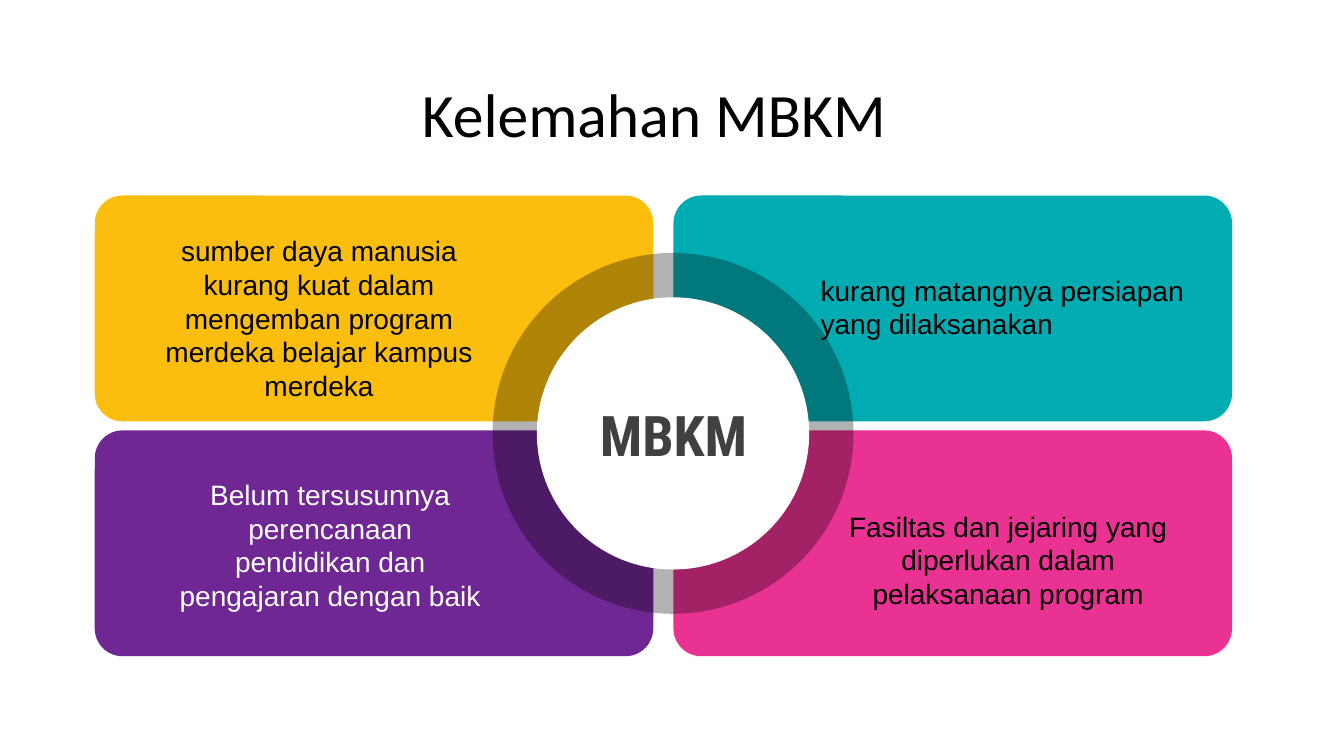
import dataclasses

import lxml.etree
import pptx
import pptx.dml.color
import pptx.enum.shapes
import pptx.enum.text
import pptx.oxml.ns
import pptx.util

SHAPES = pptx.enum.shapes.MSO_SHAPE
ANCHOR = pptx.enum.text.MSO_ANCHOR
ALIGN = pptx.enum.text.PP_ALIGN


@dataclasses.dataclass(frozen=True)
class Theme:
    black: str = "000000"
    white: str = "FFFFFF"
    grey: str = "404040"
    yellow: str = "FCBE0E"
    teal: str = "00ACB2"
    purple: str = "6F2893"
    pink: str = "EA3293"
    title_font: str = "Calibri"
    body_font: str = "Arial"
    hub_font: str = "Roboto Condensed"
    title_size: int = 44
    hub_size: int = 40
    body_size: int = 20


class SlideBuilder:
    """Draws on one slide; lengths are percentages of the slide's size."""

    def __init__(self, presentation, theme):
        self.theme = theme
        self.width = presentation.slide_width
        self.height = presentation.slide_height
        self.slide = presentation.slides.add_slide(presentation.slide_layouts[6])

    def box(self, left, top, width, height):
        return (round(self.width * left / 100), round(self.height * top / 100),
                round(self.width * width / 100), round(self.height * height / 100))

    def shape(self, kind, box, color, opacity=100):
        shape = self.slide.shapes.add_shape(kind, *self.box(*box))
        shape.shadow.inherit = False
        shape.fill.solid()
        shape.fill.fore_color.rgb = pptx.dml.color.RGBColor.from_string(color)
        shape.line.fill.background()
        if opacity < 100:
            qn = pptx.oxml.ns.qn
            fill_color = shape.fill._xPr.find(qn("a:solidFill")).find(qn("a:srgbClr"))
            alpha = lxml.etree.SubElement(fill_color, qn("a:alpha"))
            alpha.set("val", str(opacity * 1000))
        return shape

    def card(self, box, color):
        self.shape(SHAPES.ROUNDED_RECTANGLE, box, color).adjustments[0] = 0.123

    def circle(self, center_x, center_y, diameter, color, opacity=100):
        """The diameter is a share of the slide's width."""
        height = diameter * self.width / self.height
        box = (center_x - diameter / 2, center_y - height / 2, diameter, height)
        self.shape(SHAPES.OVAL, box, color, opacity)

    def text(self, box, words, color, font=None, size=None, bold=False,
             align=ALIGN.CENTER, anchor=ANCHOR.TOP, line_spacing=None):
        frame = self.slide.shapes.add_textbox(*self.box(*box)).text_frame
        frame.word_wrap = True
        frame.vertical_anchor = anchor
        paragraph = frame.paragraphs[0]
        paragraph.alignment = align
        paragraph.line_spacing = line_spacing
        run = paragraph.add_run()
        run.text = words
        run.font.name = font or self.theme.body_font
        run.font.size = pptx.util.Pt(size or self.theme.body_size)
        run.font.bold = bold
        run.font.color.rgb = pptx.dml.color.RGBColor.from_string(color)


def main():
    presentation = pptx.Presentation()
    presentation.slide_width = pptx.util.Inches(13.33)
    presentation.slide_height = pptx.util.Inches(7.5)
    theme = Theme()
    builder = SlideBuilder(presentation, theme)

    # Title
    builder.text((2.25, 10.27, 92.87, 10.53), "Kelemahan MBKM", theme.black,
                 theme.title_font, theme.title_size, anchor=ANCHOR.MIDDLE,
                 line_spacing=0.9)

    # Two by two cards
    card_colors = ((theme.yellow, theme.teal), (theme.purple, theme.pink))
    for row, colors in enumerate(card_colors):
        for column, color in enumerate(colors):
            builder.card((7.05 + 43.06 * column, 25.87 + 31.07 * row, 41.56, 29.87),
                         color)

    # Central ring and hub
    builder.circle(50.08, 57.33, 26.86, theme.black, opacity=30)
    builder.circle(50.08, 57.33, 20.26, theme.white)
    builder.text((39.91, 52.27, 20.41, 10.27), "MBKM", theme.grey,
                 theme.hub_font, theme.hub_size, bold=True)

    # Weaknesses
    weaknesses = (
        ((10.5, 30.27, 26.48, 23.73), theme.black, ALIGN.CENTER,
         "sumber daya manusia kurang kuat dalam mengemban program "
         "merdeka belajar kampus merdeka"),
        ((60.32, 35.47, 29.41, 10.27), theme.black, ALIGN.LEFT,
         "kurang matangnya persiapan yang dilaksanakan"),
        ((12.53, 62.53, 24.08, 19.33), theme.white, ALIGN.CENTER,
         "Belum tersusunnya perencanaan pendidikan dan pengajaran dengan baik"),
        ((60.84, 66.67, 28.36, 14.8), theme.black, ALIGN.CENTER,
         "Fasiltas dan jejaring yang diperlukan dalam pelaksanaan program"),
    )
    for box, color, align, words in weaknesses:
        builder.text(box, words, color, align=align)

    presentation.save("out.pptx")


if __name__ == "__main__":
    main()
